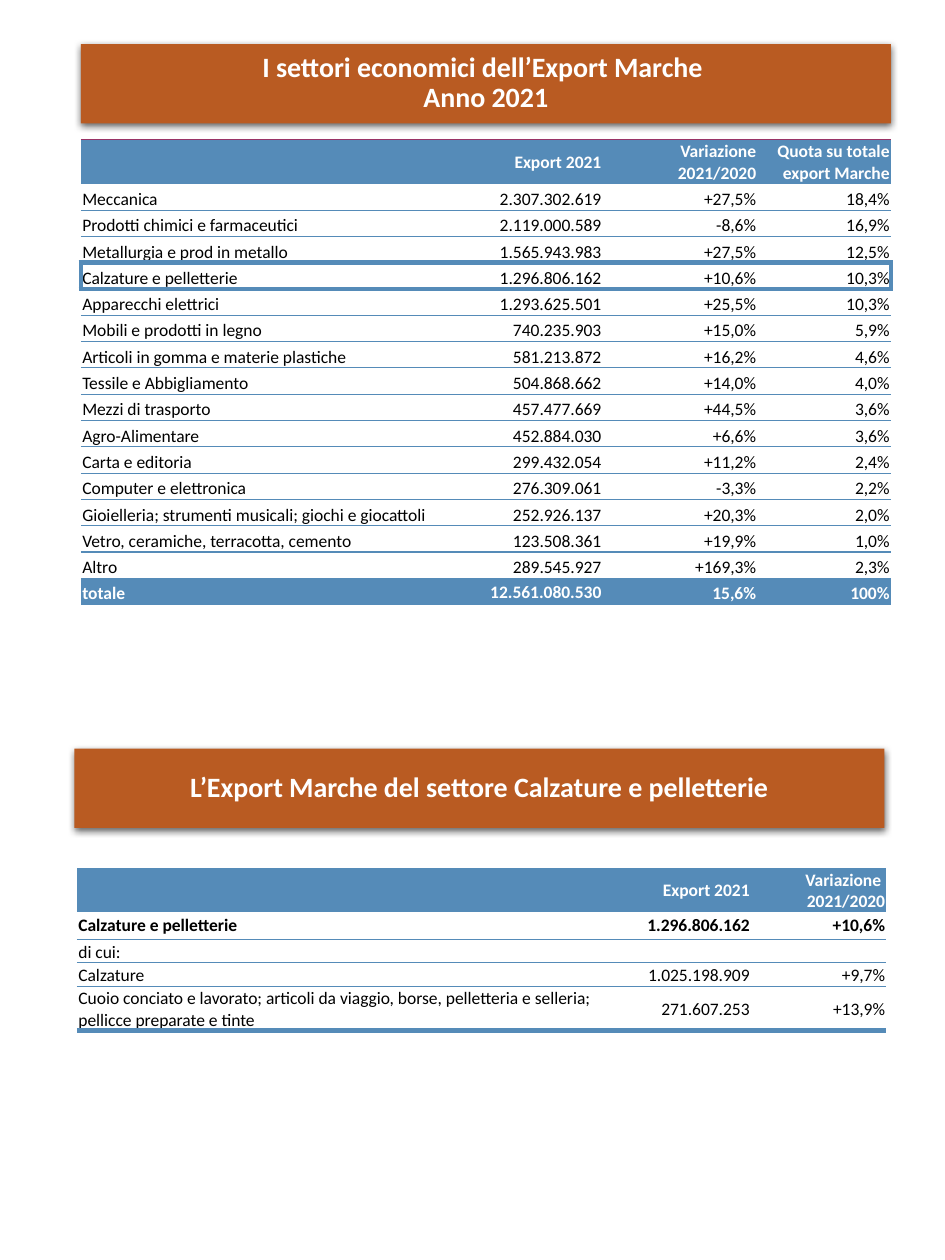
from lxml import etree
from pptx import Presentation
from pptx import util as u
from pptx.dml.color import RGBColor
from pptx.enum import shapes, text
from pptx.oxml import parse_xml
from pptx.oxml.ns import nsdecls, qn

BLUE, ORANGE, WHITE, BLACK = "558BB8", "B95B22", "FFFFFF", "000000"
THIN, THICK = (BLUE, 0.75), (BLUE, 3)


def colour(code):
    return RGBColor.from_string(code)


def draw_table(page, left, top, widths, heights, rows, edges, filled, bold, boxed, anchors):
    frame = page.shapes.add_table(len(rows), len(widths), u.Cm(left), u.Cm(top),
                                  u.Cm(sum(widths)), u.Cm(sum(heights)))
    table = frame.table
    table.first_row = table.horz_banding = False
    style = table._tbl.tblPr.find(qn("a:tableStyleId"))
    style.text = "{2D5ABB26-0587-4C30-8999-92F81FD0307C}"
    for column, width in zip(table.columns, widths):
        column.width = u.Cm(width)
    for r, values in enumerate(rows):
        table.rows[r].height = u.Cm(heights[r])
        for c, value in enumerate(values):
            cell = table.cell(r, c)
            cell.margin_left = cell.margin_right = cell.margin_top = u.Cm(0.03)
            cell.margin_bottom = 0
            middle = anchors[r] == "m" or value == "12.561.080.530"
            cell.vertical_anchor = text.MSO_ANCHOR.MIDDLE if middle else text.MSO_ANCHOR.BOTTOM
            sides = {"lnL": THICK if r in boxed and c == 0 else None,
                     "lnR": THICK if r in boxed and c == len(widths) - 1 else None,
                     "lnT": edges[r], "lnB": edges[r + 1]}
            for side, edge in sides.items():
                if edge:
                    cell._tc.get_or_add_tcPr().append(parse_xml(
                        f'<a:{side} {nsdecls("a")} w="{int(u.Pt(edge[1]))}"><a:solidFill>'
                        f'<a:srgbClr val="{edge[0]}"/></a:solidFill></a:{side}>'))
            if r in filled:
                cell.fill.solid()
                cell.fill.fore_color.rgb = colour(BLUE)
            else:
                cell.fill.background()
            para = cell.text_frame.paragraphs[0]
            para.alignment = text.PP_ALIGN.RIGHT if c else text.PP_ALIGN.LEFT
            if not value:
                etree.SubElement(para._p, qn("a:endParaRPr"), sz="1000")
                continue
            for i, line in enumerate(value.split("\n")):
                if i:
                    para.add_line_break()
                span = para.add_run()
                span.text = line
                span.font.name = "Calibri"
                span.font.size = u.Pt(10)
                span.font.bold = r in bold
                span.font.color.rgb = colour(WHITE if r in filled else BLACK)


deck = Presentation()
deck.slide_width, deck.slide_height = u.Cm(19.05), u.Cm(25.4)
page = deck.slides.add_slide(deck.slide_layouts[6])

banners = [
    (1.63, 0.89, ["I settori economici dell’Export Marche ", "Anno 2021"]),
    (1.5, 15.09, ["L’Export Marche del settore Calzature e pelletterie"]),
]
for left, top, lines in banners:
    banner = page.shapes.add_shape(shapes.MSO_SHAPE.RECTANGLE, u.Cm(left), u.Cm(top),
                                   u.Cm(16.33), u.Cm(1.6))
    banner.fill.solid()
    banner.fill.fore_color.rgb = colour(ORANGE)
    banner.line.fill.background()
    banner.shadow.inherit = False
    banner._element.spPr.find(qn("a:effectLst")).append(parse_xml(
        f'<a:outerShdw {nsdecls("a")} blurRad="{int(u.Pt(4))}" dist="{int(u.Pt(1.5))}" '
        'dir="5400000" rotWithShape="0"><a:srgbClr val="000000"><a:alpha val="60000"/>'
        '</a:srgbClr></a:outerShdw>'))
    box = banner.text_frame
    box.word_wrap = True
    box.vertical_anchor = text.MSO_ANCHOR.MIDDLE
    for i, line in enumerate(lines):
        para = box.add_paragraph() if i else box.paragraphs[0]
        para.alignment = text.PP_ALIGN.CENTER
        para.line_spacing = 0.9
        span = para.add_run()
        span.text = line
        span.font.name = "Calibri"
        span.font.size = u.Pt(16)
        span.font.bold = True
        span.font.color.rgb = colour(WHITE)

sectors = [
    ("", "Export 2021", "Variazione 2021/2020", "Quota su totale export Marche"),
    ("Meccanica", "2.307.302.619", "+27,5%", "18,4%"),
    ("Prodotti chimici e farmaceutici", "2.119.000.589", "-8,6%", "16,9%"),
    ("Metallurgia e prod in metallo", "1.565.943.983", "+27,5%", "12,5%"),
    ("Calzature e pelletterie", "1.296.806.162", "+10,6%", "10,3%"),
    ("Apparecchi elettrici", "1.293.625.501", "+25,5%", "10,3%"),
    ("Mobili e prodotti in legno", "740.235.903", "+15,0%", "5,9%"),
    ("Articoli in gomma e materie plastiche", "581.213.872", "+16,2%", "4,6%"),
    ("Tessile e Abbigliamento", "504.868.662", "+14,0%", "4,0%"),
    ("Mezzi di trasporto", "457.477.669", "+44,5%", "3,6%"),
    ("Agro-Alimentare", "452.884.030", "+6,6%", "3,6%"),
    ("Carta e editoria", "299.432.054", "+11,2%", "2,4%"),
    ("Computer e elettronica", "276.309.061", "-3,3%", "2,2%"),
    ("Gioielleria; strumenti musicali; giochi e giocattoli", "252.926.137", "+20,3%", "2,0%"),
    ("Vetro, ceramiche, terracotta, cemento", "123.508.361", "+19,9%", "1,0%"),
    ("Altro", "289.545.927", "+169,3%", "2,3%"),
    ("totale", "12.561.080.530", "15,6%", "100%"),
]
draw_table(page, 1.63, 2.82, [7.24, 3.28, 3.12, 2.69], [0.86] + [0.53] * 16, sectors,
           [("993366", 0.5)] + [THIN] * 3 + [THICK] * 2 + [THIN] * 11 + [None],
           {0, 16}, {0, 16}, {4}, "m" + "b" * 16)

footwear = [
    ("Calzature e pelletterie", "1.296.806.162", "+10,6%"),
    ("di cui:", "", ""),
    ("Calzature", "1.025.198.909", "+9,7%"),
    ("Cuoio conciato e lavorato; articoli da viaggio, borse, pelletteria e selleria; "
     "pellicce preparate e tinte", "271.607.253", "+13,9%"),
]
draw_table(page, 1.55, 18.36, [11.18, 2.41, 2.73], [0.58, 0.47, 0.48, 0.86], footwear,
           [THIN] * 4 + [THICK], set(), {0}, set(), "mbmm")
draw_table(page, 1.55, 17.5, [9.75, 3.84, 2.73], [0.86],
           [("", "Export 2021", "Variazione \n2021/2020")], [None, None], {0}, {0}, set(), "m")

deck.save("out.pptx")
